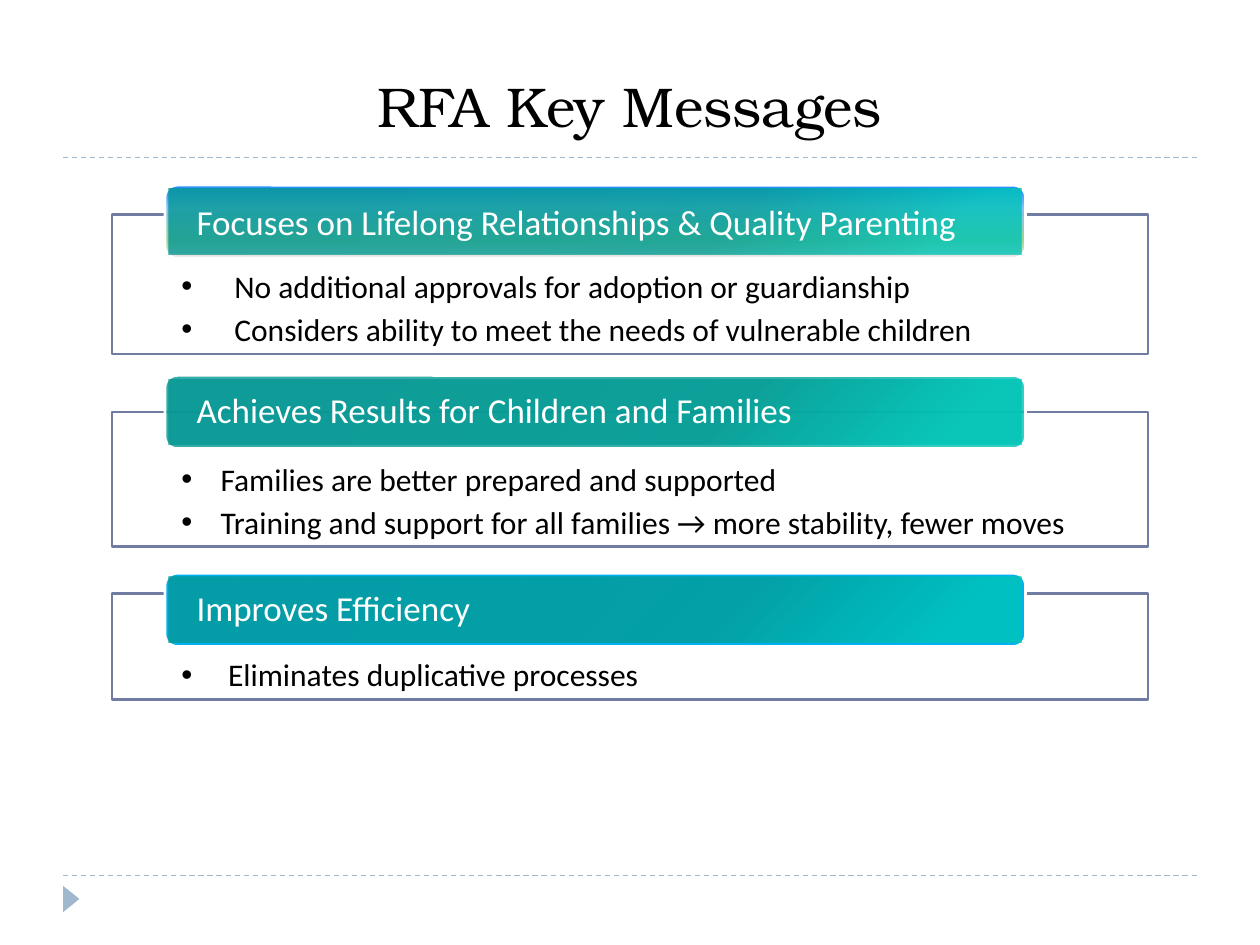
from lxml.etree import SubElement
from pptx import Presentation
from pptx.dml.color import RGBColor
from pptx.enum.dml import MSO_LINE
from pptx.enum.shapes import MSO_CONNECTOR, MSO_SHAPE
from pptx.enum.text import MSO_ANCHOR, PP_ALIGN
from pptx.oxml.ns import qn
from pptx.util import Inches, Pt

BLACK = RGBColor(0x00, 0x00, 0x00)
WHITE = RGBColor(0xFF, 0xFF, 0xFF)
PALE_BLUE = RGBColor(0x9F, 0xB8, 0xCD)
SLATE = RGBColor(0x71, 0x7C, 0xA3)
SKY = RGBColor(0x00, 0xB0, 0xF0)
TEAL = RGBColor(0x08, 0x99, 0x95)
DEEP_TEAL = RGBColor(0x05, 0x9E, 0x97)
TURQUOISE = RGBColor(0x00, 0xC5, 0xB7)
BLUE = RGBColor(0x29, 0x92, 0xFF)
LIGHT_BLUE = RGBColor(0x85, 0xC2, 0xFF)
GREEN = RGBColor(0x8E, 0xCC, 0x80)
PINK = RGBColor(0xFF, 0xEB, 0xFA)

TEAL_STOPS = [(0, TEAL, 80), (10, TEAL, 80), (65, DEEP_TEAL, 80),
              (90, TURQUOISE, 80), (100, TURQUOISE, 80)]
RAINBOW_STOPS = [(0, BLUE, 100), (5, BLUE, 100), (30, LIGHT_BLUE, 100),
                 (75, GREEN, 82), (100, PINK, 100)]
TITLE_FONT = {"name": "TeX Gyre Bonum", "size": Pt(32)}
HEADING_FONT = {"name": "Calibri", "size": Pt(20)}
BULLET_FONT = {"name": "Calibri", "size": Pt(18)}


def write(para, text, font_values, color):
    span = para.add_run()
    span.text = text
    for name, value in font_values.items():
        setattr(span.font, name, value)
    span.font.color.rgb = color


def shade(shape, stops, angle):
    shape.fill.gradient()
    gradient = shape._element.spPr.find(qn("a:gradFill"))
    for child in list(gradient):
        gradient.remove(child)
    stop_list = SubElement(gradient, qn("a:gsLst"))
    for position, color, opacity in stops:
        stop = SubElement(stop_list, qn("a:gs"), pos=str(position * 1000))
        tone = SubElement(stop, qn("a:srgbClr"), val=str(color))
        if opacity < 100:
            SubElement(tone, qn("a:alpha"), val=str(opacity * 1000))
    SubElement(gradient, qn("a:lin"), ang=str(angle * 60000), scaled="0")


deck = Presentation()
deck.slide_width, deck.slide_height = Inches(10), Inches(7.5)
page = deck.slides.add_slide(deck.slide_layouts[6])
shapes = page.shapes

for y in (6.95, 1.25):
    rule = shapes.add_connector(
        MSO_CONNECTOR.STRAIGHT, Inches(0.5), Inches(y), Inches(9.5), Inches(y))
    rule.line.color.rgb = PALE_BLUE
    rule.line.width = Pt(0.75)
    rule.line.dash_style = MSO_LINE.DASH
    SubElement(rule._element.spPr, qn("a:effectLst"))

marker = shapes.add_shape(
    MSO_SHAPE.ISOSCELES_TRIANGLE, Inches(0.46), Inches(7.07), Inches(0.21), Inches(0.13))
marker.rotation = 90
marker.shadow.inherit = False
marker.fill.solid()
marker.fill.fore_color.rgb = PALE_BLUE
marker.line.fill.background()

title = shapes.add_textbox(Inches(0.89), Inches(0.52), Inches(8.22), Inches(0.77))
title.text_frame.word_wrap = True
title_para = title.text_frame.paragraphs[0]
title_para.alignment = PP_ALIGN.CENTER
write(title_para, "RFA Key Messages", TITLE_FONT, BLACK)

sections = [
    ("Focuses on Lifelong Relationships & Quality Parenting", 1.47, 1.7, 1.11, 0.42,
     RAINBOW_STOPS, 1.0,
     ["No additional approvals for adoption or guardianship",
      "Considers ability to meet the needs of vulnerable children"]),
    ("Achieves Results for Children and Families", 2.98, 3.27, 1.07, 0.31,
     TEAL_STOPS, 0.9,
     ["Families are better prepared and supported",
      "Training and support for all families → more stability, fewer moves"]),
    ("Improves Efficiency", 4.55, 4.71, 0.84, 0.37,
     None, 0.9,
     ["Eliminates duplicative processes"]),
]

for heading, tab_top, top, height, hang, tab_stops, spacing, bullets in sections:
    frame = shapes.add_shape(
        MSO_SHAPE.RECTANGLE, Inches(0.89), Inches(top), Inches(8.22), Inches(height))
    frame.shadow.inherit = False
    frame.fill.solid()
    frame.fill.fore_color.rgb = WHITE
    white = frame._element.spPr.find(qn("a:solidFill")).find(qn("a:srgbClr"))
    SubElement(white, qn("a:alpha"), val="89000")
    frame.line.color.rgb = SLATE
    frame.line.width = Pt(1.5)
    body = frame.text_frame
    body.word_wrap = True
    body.vertical_anchor = MSO_ANCHOR.BOTTOM
    body.margin_left = body.margin_right = Inches(0.05)
    body.margin_top = body.margin_bottom = Inches(0.05)
    for index, text in enumerate(bullets):
        para = body.add_paragraph() if index else body.paragraphs[0]
        para.alignment = PP_ALIGN.LEFT
        para.level = 1
        para.space_before = Pt(3 if index else 0)
        properties = para._p.get_or_add_pPr()
        properties.set("marL", str(Inches(0.5 + hang)))
        properties.set("indent", str(-Inches(hang)))
        bullet_color = SubElement(properties, qn("a:buClr"))
        SubElement(bullet_color, qn("a:srgbClr"), val=str(BLACK))
        SubElement(properties, qn("a:buFont"), typeface="Arial")
        SubElement(properties, qn("a:buChar"), char="•")
        write(para, text, BULLET_FONT, BLACK)

    tab = shapes.add_shape(
        MSO_SHAPE.ROUNDED_RECTANGLE, Inches(1.31), Inches(tab_top), Inches(6.83), Inches(0.58))
    tab.shadow.inherit = False
    if tab_stops:
        shade(tab, tab_stops, 90 if tab_stops is RAINBOW_STOPS else 45)
    else:
        tab.fill.solid()
        tab.fill.fore_color.rgb = SKY
    tab.line.color.rgb = WHITE
    tab.line.width = Pt(1.5)

    label = shapes.add_shape(
        MSO_SHAPE.RECTANGLE, Inches(1.34), Inches(tab_top + 0.03), Inches(6.77), Inches(0.52))
    label.shadow.inherit = False
    shade(label, TEAL_STOPS, 45)
    label.line.fill.background()
    label_text = label.text_frame
    label_text.word_wrap = True
    label_text.vertical_anchor = MSO_ANCHOR.MIDDLE
    label_text.margin_left = label_text.margin_right = Inches(0.22)
    label_text.margin_top = label_text.margin_bottom = Inches(0)
    para = label_text.paragraphs[0]
    para.alignment = PP_ALIGN.LEFT
    para.line_spacing = spacing
    write(para, heading, HEADING_FONT, WHITE)

deck.save("out.pptx")
